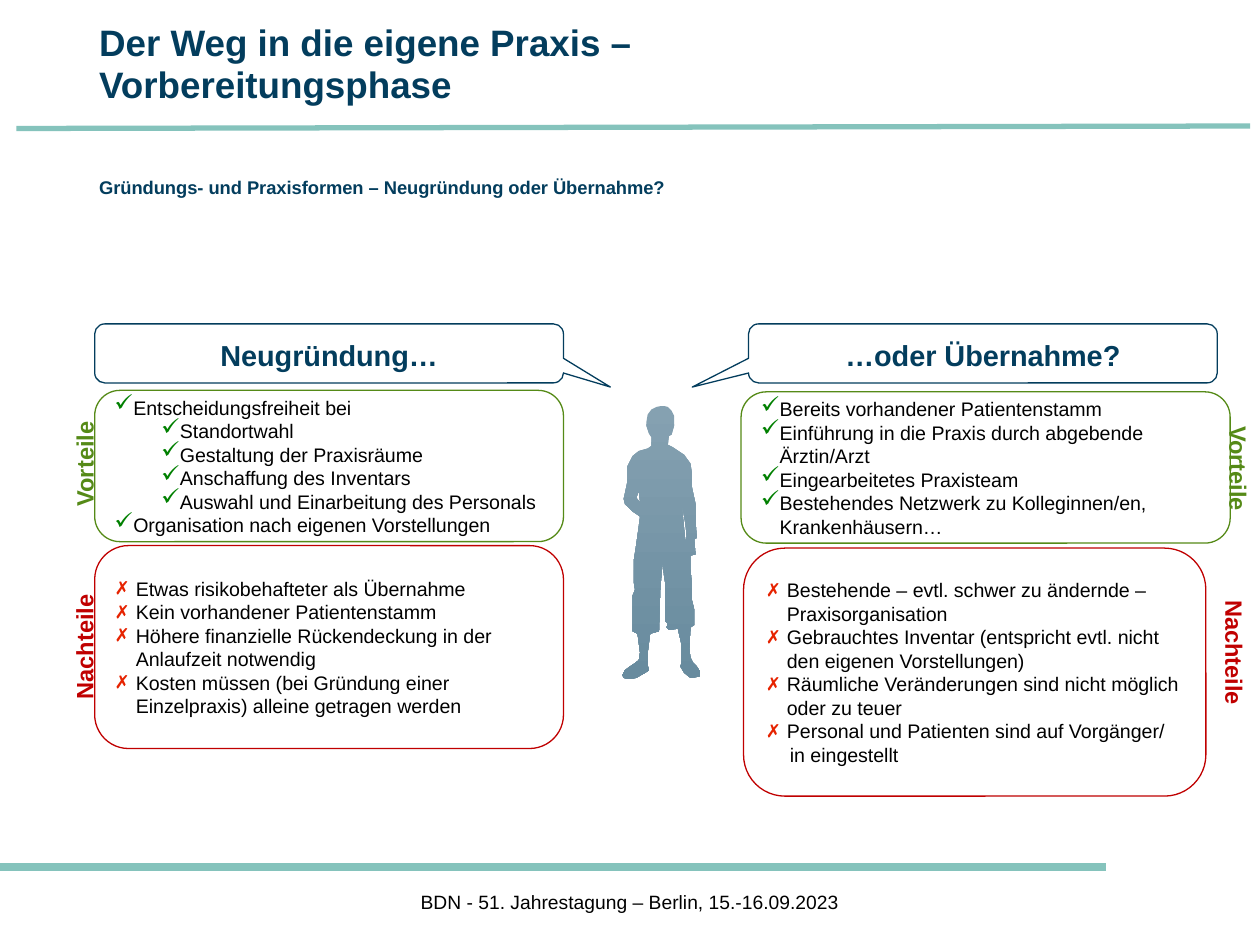
from lxml import etree
from pptx import Presentation
from pptx.dml.color import RGBColor
from pptx.enum.shapes import MSO_CONNECTOR, MSO_SHAPE
from pptx.enum.text import MSO_ANCHOR, PP_ALIGN
from pptx.oxml.ns import qn
from pptx.util import Cm, Pt

LEFT, CENTER = PP_ALIGN.LEFT, PP_ALIGN.CENTER
TOP, MIDDLE = MSO_ANCHOR.TOP, MSO_ANCHOR.MIDDLE
STRAIGHT = MSO_CONNECTOR.STRAIGHT
RECT, ROUNDED = MSO_SHAPE.RECTANGLE, MSO_SHAPE.ROUNDED_RECTANGLE
CALLOUT = MSO_SHAPE.ROUNDED_RECTANGULAR_CALLOUT

THEME = {
    "font": "Arial",
    "navy": "033D5D", "teal": "85C3BC", "black": "000000", "white": "FFFFFF",
    "pro": "558A17", "con": "C00000", "check": "008000", "cross": "E62300",
    "figure": ("85A1B1", "688B9E"),
    "title": 21, "subtitle": 10.5, "heading": 16.5, "label": 13.5, "body": 11.2, "footer": 11,
}


def rgb(name):
    return RGBColor.from_string(THEME[name])


def write(sp, lines, size, color, bold=False, align=LEFT, anchor=MIDDLE, spacing=None, mark=None):
    tf = sp.text_frame
    tf.word_wrap = True
    tf.vertical_anchor = anchor
    for i, (indent, text) in enumerate(lines):
        p = tf.paragraphs[0] if i == 0 else tf.add_paragraph()
        p.alignment = align
        if spacing:
            p.line_spacing = spacing
        if indent:
            pPr = p._p.get_or_add_pPr()
            pPr.set("marL", str(Cm(indent)))
            if mark and text != "in eingestellt":
                symbol, tint = mark
                pPr.set("indent", str(-Cm(0.38)))
                buClr = etree.SubElement(pPr, qn("a:buClr"))
                etree.SubElement(buClr, qn("a:srgbClr"), val=THEME[tint])
                etree.SubElement(pPr, qn("a:buSzPct"), val="120000")
                etree.SubElement(pPr, qn("a:buChar"), char=symbol)
        r = p.add_run()
        r.text = text
        for key, value in {"name": THEME["font"], "size": Pt(THEME[size]), "bold": bold}.items():
            setattr(r.font, key, value)
        r.font.color.rgb = rgb(color)


prs = Presentation()
prs.slide_width, prs.slide_height = Cm(25.4), Cm(19.05)
s = prs.slides.add_slide(prs.slide_layouts[6])

for x1, y1, x2, y2, width in [(0, 17.48, 22.3, 17.48, 4.5), (0.33, 2.59, 25.2, 2.54, 3)]:
    rule = s.shapes.add_connector(STRAIGHT, Cm(x1), Cm(y1), Cm(x2), Cm(y2))
    rule.line.color.rgb = rgb("teal")
    rule.line.width = Pt(width)
    etree.SubElement(rule._element.spPr, qn("a:effectLst"))

title = s.shapes.add_textbox(Cm(1.75), Cm(0.33), Cm(15.14), Cm(1.96))
write(title, [(0, "Der Weg in die eigene Praxis – Vorbereitungsphase")],
      "title", "navy", bold=True, spacing=0.95)
subtitle = s.shapes.add_textbox(Cm(1.75), Cm(3.4), Cm(22.81), Cm(0.74))
write(subtitle, [(0, "Gründungs- und Praxisformen – Neugründung oder Übernahme?")],
      "subtitle", "navy", bold=True)

outline = [
    (495, 538), (499, 539), (505, 538), (512, 534), (515, 532), (514, 528), (514, 518),
    (516, 503), (523, 501), (524, 468), (525, 456), (526, 446), (527, 457), (528, 463),
    (528, 493), (530, 495), (529, 498), (531, 500), (538, 499), (541, 512), (541, 526),
    (540, 529), (543, 534), (548, 538), (555, 537), (556, 534), (553, 529), (550, 526),
    (548, 522), (547, 515), (548, 498), (551, 496), (551, 484), (549, 476), (549, 463),
    (548, 452), (548, 441), (552, 440), (551, 428), (553, 427), (552, 413), (552, 400),
    (549, 386), (549, 375), (548, 368), (543, 361), (534, 355), (530, 353), (531, 346),
    (533, 345), (535, 338), (535, 330), (533, 326), (530, 323), (526, 322), (521, 323),
    (517, 325), (514, 329), (513, 335), (513, 338), (515, 344), (517, 347), (517, 354),
    (514, 356), (507, 358), (502, 362), (498, 370), (498, 382), (495, 396), (496, 400),
    (502, 406), (508, 410), (505, 432), (503, 445), (503, 462), (504, 468), (502, 473),
    (502, 501), (506, 503), (508, 518), (507, 524), (503, 527), (500, 529), (496, 532),
    (494, 536),
]
arm_gap = [(508, 399), (505, 395), (507, 390)]
hand_gap = [(541, 399), (544, 416), (545, 426), (544, 430), (543, 420)]
builder = s.shapes.build_freeform(*outline[0], scale=Cm(0.0254))
builder.add_line_segments(outline[1:])
for gap in (arm_gap, hand_gap):
    builder.move_to(*gap[0])
    builder.add_line_segments(gap[1:])
person = builder.convert_to_shape()
person.shadow.inherit = False
person.line.fill.background()
person.fill.gradient()
person.fill.gradient_angle = 270
for stop, tint in zip(person.fill.gradient_stops, THEME["figure"]):
    stop.color.rgb = RGBColor.from_string(tint)

check, cross = ("✓", "check"), ("✗", "cross")
heading = {"size": "heading", "color": "navy", "bold": True, "align": CENTER, "spacing": 1.1}
pros = {"size": "body", "color": "black", "mark": check}
cons = {"size": "body", "color": "black", "mark": cross}
footer = {"size": "footer", "color": "black", "align": CENTER}

boxes = [
    (RECT, (0, 17.83, 25.4, 0.71), (), "white", footer,
     [(0, "BDN - 51. Jahrestagung – Berlin, 15.-16.09.2023")]),
    (CALLOUT, (1.91, 6.53, 9.45, 1.19), (0.6, 0.57, 0.17), "navy", heading,
     [(0, "Neugründung…")]),
    (CALLOUT, (15.09, 6.53, 9.45, 1.19), (-0.62, 0.57, 0.17), "navy", heading,
     [(0, "…oder Übernahme?")]),
    (ROUNDED, (1.91, 7.87, 9.45, 3.05), (), "pro", pros, [
        (0.38, "Entscheidungsfreiheit bei"),
        (1.32, "Standortwahl"),
        (1.32, "Gestaltung der Praxisräume"),
        (1.32, "Anschaffung des Inventars"),
        (1.32, "Auswahl und Einarbeitung des Personals"),
        (0.38, "Organisation nach eigenen Vorstellungen")]),
    (ROUNDED, (1.91, 11, 9.45, 4.09), (), "con", cons, [
        (0.38, "Etwas risikobehafteter als Übernahme"),
        (0.38, "Kein vorhandener Patientenstamm"),
        (0.38, "Höhere finanzielle Rückendeckung in der Anlaufzeit notwendig"),
        (0.38, "Kosten müssen (bei Gründung einer Einzelpraxis) alleine getragen werden")]),
    (ROUNDED, (14.99, 11.05, 9.32, 5), (), "con", cons, [
        (0.38, "Bestehende – evtl. schwer zu ändernde – Praxisorganisation"),
        (0.38, "Gebrauchtes Inventar (entspricht evtl. nicht den eigenen Vorstellungen)"),
        (0.38, "Räumliche Veränderungen sind nicht möglich oder zu teuer"),
        (0.38, "Personal und Patienten sind auf Vorgänger/"),
        (0.44, "in eingestellt")]),
    (ROUNDED, (14.94, 7.9, 9.86, 3.05), (), "pro", pros, [
        (0.38, "Bereits vorhandener Patientenstamm"),
        (0.38, "Einführung in die Praxis durch abgebende Ärztin/Arzt"),
        (0.38, "Eingearbeitetes Praxisteam"),
        (0.38, "Bestehendes Netzwerk zu Kolleginnen/en, Krankenhäusern…")]),
]
for kind, place, adjustments, border, style, lines in boxes:
    sp = s.shapes.add_shape(kind, *map(Cm, place))
    sp.shadow.inherit = False
    sp.fill.background()
    sp.line.color.rgb = rgb(border)
    sp.line.width = Pt(0.75)
    for i, value in enumerate(adjustments):
        sp.adjustments[i] = value
    write(sp, lines, **style)

labels = [
    ("Vorteile", (0.51, 8.84, 2.39, 0.84), 270, "pro", LEFT),
    ("Nachteile", (0.25, 12.62, 2.9, 0.84), 270, "con", CENTER),
    ("Nachteile", (23.22, 12.75, 3.35, 0.81), 90, "con", CENTER),
    ("Vorteile", (23.77, 9.12, 2.39, 0.84), 90, "pro", LEFT),
]
for text, place, rotation, color, align in labels:
    sp = s.shapes.add_textbox(*map(Cm, place))
    sp.rotation = rotation
    write(sp, [(0, text)], "label", color, bold=True, align=align, anchor=TOP)

prs.save("out.pptx")
